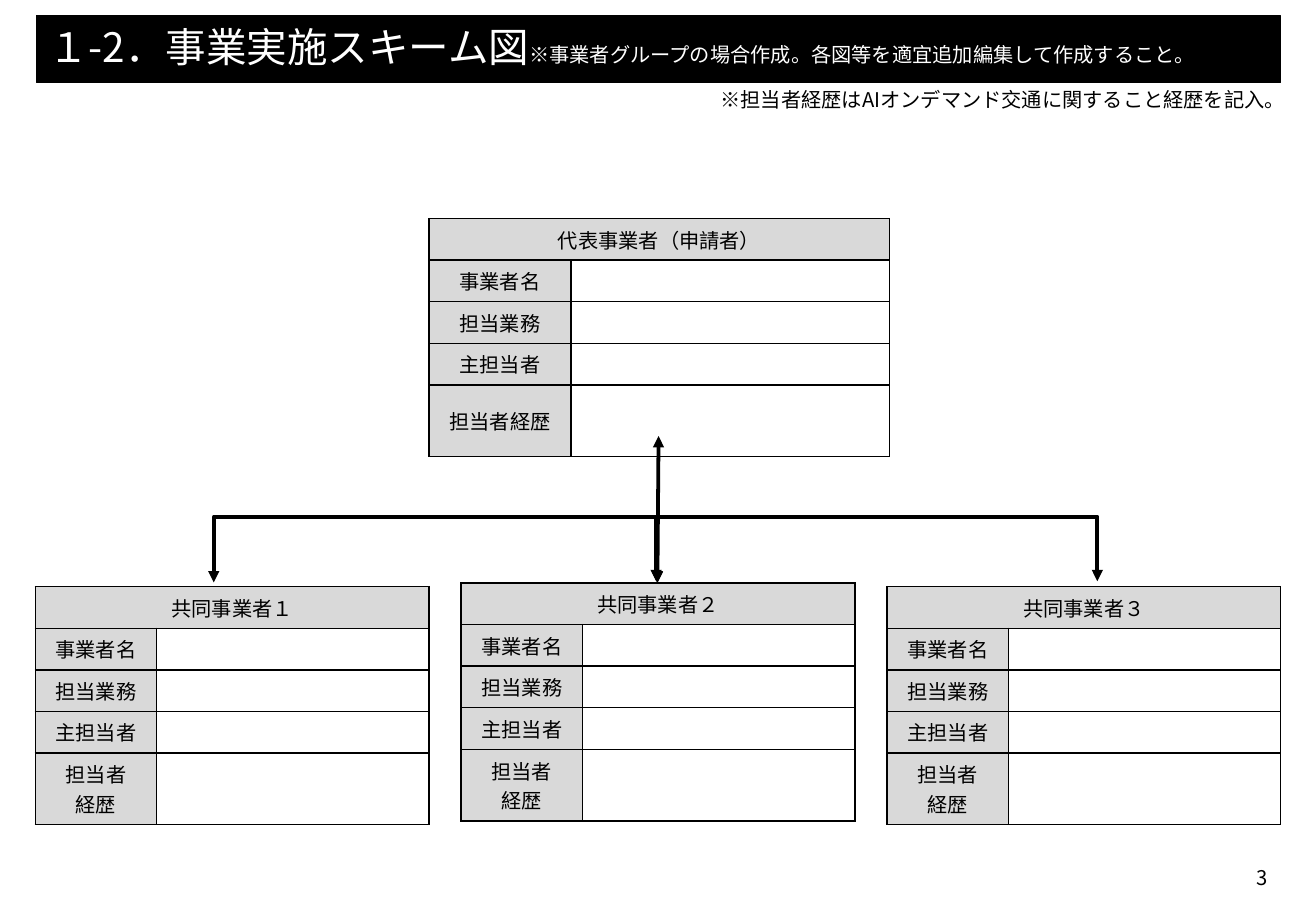
import pptx
import pptx.util
import pptx.dml.color
import pptx.enum.shapes
import pptx.enum.text
import pptx.oxml
import pptx.oxml.ns

MSO_SHAPE = pptx.enum.shapes.MSO_SHAPE
MSO_CONNECTOR = pptx.enum.shapes.MSO_CONNECTOR
ALIGN = pptx.enum.text.PP_ALIGN
MIDDLE = pptx.enum.text.MSO_ANCHOR.MIDDLE
TOP = pptx.enum.text.MSO_ANCHOR.TOP


def color(value):
    return pptx.dml.color.RGBColor.from_string(value)


def unit(cells):
    """Convert columns or rows of the 0.1 inch grid to a length."""
    return pptx.util.Inches(cells / 10)


def add_xml(parent, tag, **attributes):
    child = pptx.oxml.parse_xml(f'<{tag} {pptx.oxml.ns.nsdecls("a")}/>')
    for name, value in attributes.items():
        child.set(name, str(value))
    parent.append(child)
    return child


class Scheme:
    font = "Noto Sans CJK JP"
    black, white, gray = "000000", "FFFFFF", "D9D9D9"
    size = 12

    def __init__(self, prs):
        self.s = prs.slides.add_slide(prs.slide_layouts[6])

    def add_text(self, p, text, size=None, ink=None):
        r = p.add_run()
        r.text = text
        style = {"name": self.font, "size": pptx.util.Pt(size or self.size), "bold": False}
        for name, value in style.items():
            setattr(r.font, name, value)
        r.font.color.rgb = color(ink or self.black)
        add_xml(r.font._element, "a:ea", typeface=self.font)

    def paragraph(self, sp, runs, align, anchor, spacing):
        tf = sp.text_frame
        tf.word_wrap = True
        tf.vertical_anchor = anchor
        p = tf.paragraphs[0]
        p.alignment, p.line_spacing = align, spacing
        for run in runs:
            self.add_text(p, *run)

    def bar(self, box, runs):
        sp = self.s.shapes.add_shape(MSO_SHAPE.RECTANGLE, *map(unit, box))
        sp.shadow.inherit = False
        sp.fill.solid()
        sp.fill.fore_color.rgb = sp.line.color.rgb = color(self.black)
        sp.line.width = pptx.util.Pt(0.75)
        self.paragraph(sp, runs, ALIGN.LEFT, MIDDLE, 0.9)

    def label(self, box, text, align=ALIGN.LEFT, anchor=TOP, spacing=1.0):
        sp = self.s.shapes.add_textbox(*map(unit, box))
        self.paragraph(sp, [(text,)], align, anchor, spacing)

    def cell(self, cell, text, fill):
        cell.vertical_anchor = MIDDLE
        tc_pr = cell._tc.get_or_add_tcPr()
        for side in "LRTB":
            ln = add_xml(tc_pr, f"a:ln{side}", w=pptx.util.Pt(1))
            add_xml(add_xml(ln, "a:solidFill"), "a:srgbClr", val=self.black)
        cell.fill.solid()
        cell.fill.fore_color.rgb = color(fill)
        tf = cell.text_frame
        for i, line in enumerate(text.split("\n")):
            p = tf.add_paragraph() if i else tf.paragraphs[0]
            p.alignment = ALIGN.CENTER
            if line:
                self.add_text(p, line)
            else:
                add_xml(p._p, "a:endParaRPr", sz=self.size * 100)

    def company(self, left, top, columns, title, career):
        labels = [title, "事業者名", "担当業務", "主担当者", career]
        heights = [3.42] * 4 + [5.9]
        box = (left, top, sum(columns), sum(heights))
        table = self.s.shapes.add_table(len(labels), 2, *map(unit, box)).table
        table.first_row = table.horz_banding = False
        for column, width in zip(table.columns, columns):
            column.width = unit(width)
        for i, (text, height) in enumerate(zip(labels, heights)):
            table.rows[i].height = unit(height)
            self.cell(table.cell(i, 0), text, self.gray)
            self.cell(table.cell(i, 1), "", self.white if i else self.gray)
        table.cell(0, 0).merge(table.cell(0, 1))

    def arrow(self, kind, start, end):
        c = self.s.shapes.add_connector(kind, *map(unit, start + end))
        c.line.color.rgb = color(self.black)
        c.line.width = pptx.util.Pt(2.25)
        for tag in ("a:headEnd", "a:tailEnd"):
            add_xml(c.line._get_or_add_ln(), tag, type="triangle")
        add_xml(c._element.spPr, "a:effectLst")
        return c

    def bracket(self, left, right, bottom, rise):
        """Join two points of equal height by a line that runs up and across."""
        depth, middle, half = 0.1, (left + right) / 2, (right - left) / 2
        c = self.arrow(MSO_CONNECTOR.ELBOW, (middle + depth / 2, bottom + half),
                       (middle - depth / 2, bottom - half))
        sp_pr = c._element.spPr
        sp_pr.find(pptx.oxml.ns.qn("a:xfrm")).set("rot", str(90 * 60000))
        guides = next(sp_pr.iter(pptx.oxml.ns.qn("a:avLst")))
        add_xml(guides, "a:gd", name="adj1", fmla=f"val {round(rise / depth * 100000)}")


def main():
    prs = pptx.Presentation()
    prs.slide_width, prs.slide_height = unit(108.3), unit(75)
    scheme = Scheme(prs)

    # Title bar
    scheme.bar((3, 1.3, 102.4, 5.5), [
        ("１-2．事業実施スキーム図", 24, scheme.white),
        ("※事業者グループの場合作成。各図等を適宜追加編集して作成すること。", 12, scheme.white)])

    # Lead company
    scheme.company(35.3, 18, (11.7, 26.2), "代表事業者（申請者）", "担当者経歴")

    # Arrows between the companies
    scheme.arrow(MSO_CONNECTOR.STRAIGHT, (54.2, 35.9), (54.1, 48))
    for left, right in ((17.6, 54), (54.1, 90.3)):
        scheme.bracket(left, right, 47.9, 5.5)

    # Partner companies
    for i, (number, top) in enumerate(zip("１２３", (48.3, 48, 48.3))):
        scheme.company(2.9 + 35.05 * i, top, (10, 22.4), f"共同事業者{number}", "担当者\n経歴")

    # Note and page number
    scheme.label((58.3, 6.9, 47, 5), "※担当者経歴はAIオンデマンド交通に関すること経歴を記入。", spacing=0.9)
    scheme.label((99, 70.3, 6.3, 3.9), "3", ALIGN.RIGHT, MIDDLE)

    prs.save("out.pptx")


if __name__ == "__main__":
    main()
